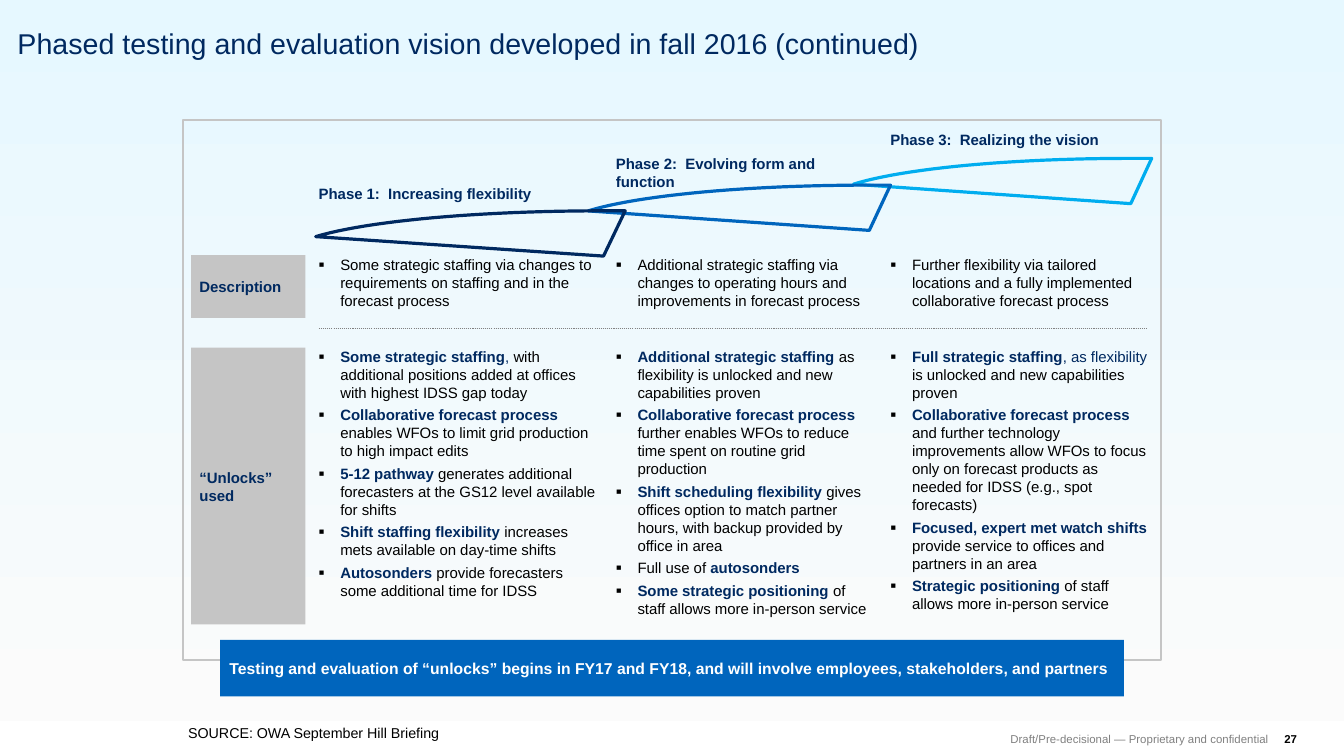
import pptx
import pptx.util
import pptx.dml.color
import pptx.enum.dml
import pptx.enum.shapes
import pptx.enum.text
from lxml import etree

Inches = pptx.util.Inches
Pt = pptx.util.Pt
ALIGN = pptx.enum.text.PP_ALIGN
ANCHOR = pptx.enum.text.MSO_ANCHOR
RECT = pptx.enum.shapes.MSO_SHAPE.RECTANGLE
DRAW = "{http://schemas.openxmlformats.org/drawingml/2006/main}"

HUES = {"navy": "002960", "blue": "0065BD", "cyan": "00ADEF", "grey": "C5C5C5",
        "dim": "808080", "black": "000000", "white": "FFFFFF",
        "sky": "E6F8FF", "mist": "FBFBFB"}
STYLES = {"lead": ("navy", True), "soft": ("navy", False), "body": ("black", False),
          "foot": ("dim", False), "page": ("black", True), "call": ("white", True)}

PHASES = [
    {"x": 3.1, "w": 2.76, "name": "Phase 1:  Increasing flexibility", "top": 1.79,
     "swoosh": (3.07, 2.05, 3.01, 0.44), "hue": "navy",
     "about": "Some strategic staffing via changes to requirements on staffing and in the forecast process",
     "unlocks": [
         [("Some strategic staffing", "lead"), (", ", "soft"),
          ("with additional positions added at offices with highest IDSS gap today", "body")],
         [("Collaborative forecast process ", "lead"),
          ("enables WFOs to limit grid production to high impact edits", "body")],
         [("5-12 pathway ", "lead"),
          ("generates additional forecasters at the GS12 level available for shifts", "body")],
         [("Shift staffing flexibility ", "lead"),
          ("increases mets available on day-time shifts", "body")],
         [("Autosonders ", "lead"),
          ("provide forecasters some additional time for IDSS", "body")]]},
    {"x": 5.99, "w": 2.54, "name": "Phase 2:  Evolving form and function", "top": 1.5,
     "swoosh": (5.72, 1.8, 2.94, 0.44), "hue": "blue",
     "about": "Additional strategic staffing via changes to operating hours and improvements in forecast process",
     "unlocks": [
         [("Additional strategic staffing ", "lead"),
          ("as flexibility is unlocked and new capabilities proven", "body")],
         [("Collaborative forecast process ", "lead"),
          ("further enables WFOs to reduce time spent on routine grid production", "body")],
         [("Shift scheduling flexibility ", "lead"),
          ("gives offices option to match partner hours, with backup provided by office in area", "body")],
         [("Full use of ", "body"), ("autosonders", "lead")],
         [("Some strategic positioning ", "lead"),
          ("of staff allows more in-person service", "body")]]},
    {"x": 8.66, "w": 2.5, "name": "Phase 3:  Realizing the vision", "top": 1.27,
     "swoosh": (8.3, 1.54, 2.9, 0.44), "hue": "cyan",
     "about": "Further flexibility via tailored locations and a fully implemented collaborative forecast process",
     "unlocks": [
         [("Full strategic staffing", "lead"), (", as flexibility ", "soft"),
          ("is unlocked and new capabilities proven", "body")],
         [("Collaborative forecast process ", "lead"),
          ("and further technology improvements allow WFOs to focus only on forecast products "
           "as needed for IDSS (e.g., spot forecasts)", "body")],
         [("Focused, expert met watch shifts ", "lead"),
          ("provide service to offices and partners in an area", "body")],
         [("Strategic positioning ", "lead"),
          ("of staff allows more in-person service", "body")]]},
]


def tint(name):
    """Return the named colour."""
    return pptx.dml.color.RGBColor.from_string(HUES[name])


def span(box):
    """Turn a box in inches into lengths."""
    return [Inches(v) for v in box]


def dot(para):
    """Give a paragraph a square bullet and a hanging indent."""
    props = para._p.get_or_add_pPr()
    props.set("marL", str(Inches(0.21)))
    props.set("indent", str(-Inches(0.21)))
    hue = etree.SubElement(props, DRAW + "buClr")
    etree.SubElement(hue, DRAW + "srgbClr", val=HUES["black"])
    etree.SubElement(props, DRAW + "buSzPct", val="114000")
    etree.SubElement(props, DRAW + "buFont", typeface="Arial")
    etree.SubElement(props, DRAW + "buChar", char="▪")


def write(shape, paras, size=10.5, pad=0, anchor=ANCHOR.TOP, align=ALIGN.LEFT, bullet=False):
    """Fill a shape with paragraphs of styled runs."""
    frame = shape.text_frame
    frame.word_wrap = True
    frame.auto_size = pptx.enum.text.MSO_AUTO_SIZE.NONE
    frame.vertical_anchor = anchor
    frame.margin_left = frame.margin_right = Inches(pad)
    frame.margin_top = frame.margin_bottom = Inches(pad)
    for i, runs in enumerate(paras):
        para = frame.add_paragraph() if i else frame.paragraphs[0]
        if bullet:
            dot(para)
        para.alignment = align
        if i:
            para.space_before = Pt(3.1)
        for text, style in runs:
            run = para.add_run()
            run.text = text
            hue, run.font.bold = STYLES[style]
            run.font.name = "Arial"
            run.font.size = Pt(size)
            run.font.color.rgb = tint(hue)


def note(slide, box, paras, **look):
    """Add a text box."""
    write(slide.shapes.add_textbox(*span(box)), paras, **look)


def block(slide, box, fill=None):
    """Add a plain rectangle without a line."""
    shape = slide.shapes.add_shape(RECT, *span(box))
    shape.shadow.inherit = False
    shape.line.fill.background()
    if fill:
        shape.fill.solid()
        shape.fill.fore_color.rgb = tint(fill)
    else:
        shape.fill.background()
    return shape


def swoosh(slide, box, hue):
    """Draw a rising open arrow shape within the box."""
    x, y, w, h = box
    knots = [(0, 0.57), (0.17, 0.22), (0.53, 0), (0.93, 0)]
    steps = 24
    curve = []
    for i in range(steps + 1):
        t = i / steps
        parts = [(1 - t) ** 3, 3 * t * (1 - t) ** 2, 3 * t * t * (1 - t), t ** 3]
        curve.append([sum(p * k[axis] for p, k in zip(parts, knots)) for axis in (0, 1)])
    points = [(Inches(x + a * w), Inches(y + b * h))
              for a, b in curve + [(1, 0), (0.93, 1)]]
    path = slide.shapes.build_freeform(*points[0])
    path.add_line_segments(points[1:], close=True)
    shape = path.convert_to_shape()
    shape.shadow.inherit = False
    shape.fill.background()
    shape.line.color.rgb = tint(hue)
    shape.line.width = Pt(2.25)


def back(slide, box):
    """Draw the pale gradient backdrop."""
    fill = block(slide, box).fill
    fill.gradient()
    fill.gradient_angle = 90
    for stop, hue, place in zip(fill.gradient_stops, ("mist", "sky"), (0, 1)):
        stop.color.rgb = tint(hue)
        stop.position = place


def head(slide, box, text):
    """Place the title in front of the backdrop."""
    title = slide.shapes.title
    title.left, title.top, title.width, title.height = span(box)
    write(title, [[(text, "soft")]], size=20)
    title.element.getparent().append(title.element)


def rule(slide, x, y, w):
    """Draw the dotted divider."""
    line = slide.shapes.add_connector(pptx.enum.shapes.MSO_CONNECTOR.STRAIGHT,
                                      *span((x, y, x + w, y)))
    line.line.color.rgb = tint("dim")
    line.line.width = Pt(0.75)
    line.line.dash_style = pptx.enum.dml.MSO_LINE.ROUND_DOT
    etree.SubElement(line._element.spPr, DRAW + "effectLst")


def panel(slide, box):
    """Build the framed phase grid with its row labels."""
    x, y, w, h = box
    rule(slide, x + 1.32, y + 2.02, 8.06)
    for phase in reversed(PHASES):
        swoosh(slide, phase["swoosh"], phase["hue"])
    rows = [("Description", y + 1.31, 0.61), ("“Unlocks” used", y + 2.21, 2.69)]
    for text, top, tall in rows:
        label = block(slide, (x + 0.08, top, 1.11, tall), "grey")
        write(label, [[(text, "lead")]], pad=0.08, anchor=ANCHOR.MIDDLE)
    for phase in PHASES:
        left, wide = phase["x"], phase["w"]
        note(slide, (left, phase["top"], wide, 0.35), [[(phase["name"], "lead")]])
        cells = [[[(phase["about"], "body")]], phase["unlocks"]]
        for (_, top, tall), paras in zip(rows, cells):
            note(slide, (left, top, wide, tall), paras, bullet=True)
    frame = block(slide, box)
    frame.line.color.rgb = tint("grey")
    frame.line.width = Pt(1.5)


def foot(slide, y):
    """Write the source, the status line and the page number."""
    note(slide, (1.83, y - 0.08, 6.71, 0.17), [[("SOURCE: OWA September Hill Briefing", "body")]], size=10)
    note(slide, (9.5, y, 2.84, 0.13), [[("Draft/Pre-decisional — Proprietary and confidential", "foot")]],
         size=8, anchor=ANCHOR.MIDDLE, align=ALIGN.RIGHT)
    note(slide, (12.49, y, 0.3, 0.13), [[("27", "page")]], size=8, anchor=ANCHOR.MIDDLE)


def main():
    """Build and save the slide."""
    deck = pptx.Presentation()
    deck.slide_width, deck.slide_height = span((13.07, 7.35))
    slide = deck.slides.add_slide(deck.slide_layouts[5])
    back(slide, (0, 0, 13.07, 7.01))
    head(slide, (0.17, 0.25, 12.57, 0.34),
         "Phased testing and evaluation vision developed in fall 2016 (continued)")
    panel(slide, (1.78, 1.17, 9.51, 5.25))
    banner = block(slide, (2.14, 6.22, 8.79, 0.55), "blue")
    write(banner, [[("Testing and evaluation of “unlocks” begins in FY17 and FY18, and will involve "
                     "employees, stakeholders, and partners", "call")]],
          size=11, pad=0.09, anchor=ANCHOR.MIDDLE)
    foot(slide, 7.12)
    deck.save("out.pptx")


if __name__ == "__main__":
    main()
